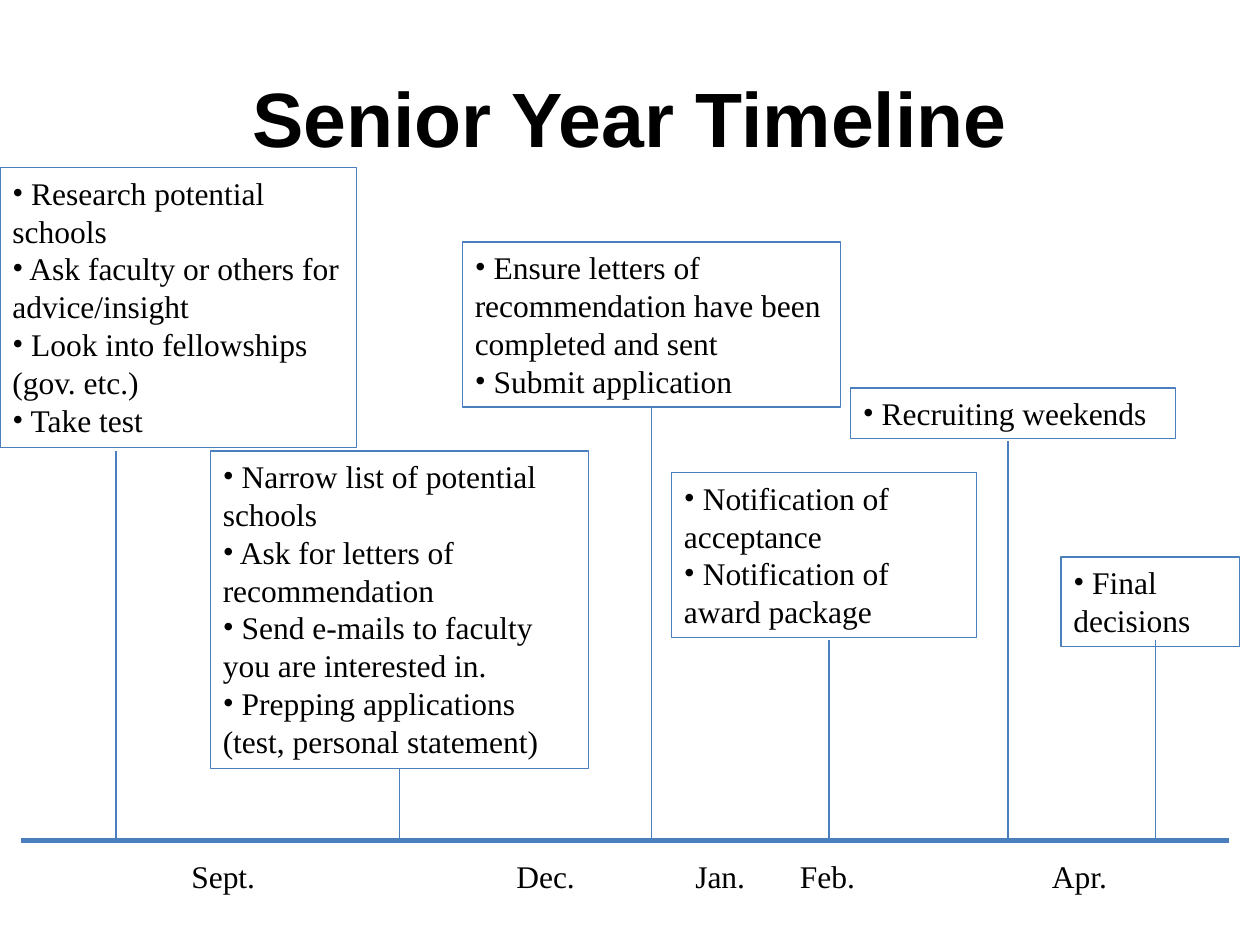
from lxml import etree
from pptx import Presentation
from pptx.dml.color import RGBColor
from pptx.enum import shapes, text
from pptx.oxml import ns
from pptx.util import Inches, Pt

BLUE = RGBColor(0x4B, 0x7E, 0xBC)
BLACK = RGBColor(0, 0, 0)
AXIS_Y = 6.67


def write(paragraph, words, font="Times New Roman", size=18, bold=False):
    run = paragraph.add_run()
    run.text = words
    run.font.name = font
    run.font.size = Pt(size)
    run.font.bold = bold
    run.font.color.rgb = BLACK


def draw_line(x1, y1, x2, y2, width):
    line = slide.shapes.add_connector(
        shapes.MSO_CONNECTOR.STRAIGHT, Inches(x1), Inches(y1), Inches(x2), Inches(y2))
    line.line.color.rgb = BLUE
    line.line.width = Pt(width)
    etree.SubElement(line._element.spPr, ns.qn("a:effectLst"))
    return line


prs = Presentation()
prs.slide_width, prs.slide_height = Inches(10), Inches(7.5)
slide = prs.slides.add_slide(prs.slide_layouts[6])

title = slide.shapes.add_textbox(Inches(0.5), Inches(0.3), Inches(9), Inches(1.25)).text_frame
title.word_wrap = True
title.vertical_anchor = text.MSO_ANCHOR.MIDDLE
title.paragraphs[0].alignment = text.PP_ALIGN.CENTER
write(title.paragraphs[0], " Senior Year Timeline ", "Arial", 44, True)

draw_line(0.17, AXIS_Y, 9.75, AXIS_Y, 3)

months = [("Sept.", 1.42), ("Dec.", 4), ("Jan.", 5.42), ("Feb.", 6.25), ("Apr.", 8.25)]
for month, left in months:
    label = slide.shapes.add_textbox(Inches(left), Inches(6.75), Inches(0.83), Inches(0.4)).text_frame
    label.word_wrap = True
    write(label.paragraphs[0], month)

stages = [
    (0, 1.33, 2.83, 2.22, 0.92, 3.58, False,
     ["Research potential schools", "Ask faculty or others for advice/insight",
      "Look into fellowships (gov. etc.)", "Take test"]),
    (1.67, 3.58, 3, 2.52, 3.17, 6.1, True,
     ["Narrow list of potential schools", "Ask for letters of recommendation",
      "Send e-mails to faculty you are interested in.",
      "Prepping applications (test, personal statement)"]),
    (3.67, 1.92, 3, 1.31, 5.17, 3.23, True,
     ["Ensure letters of recommendation have been completed and sent",
      "Submit application"]),
    (5.33, 3.75, 2.42, 1.31, 6.58, 5.08, False,
     ["Notification of acceptance", "Notification of award package"]),
    (6.75, 3.08, 2.58, 0.4, 8, 3.5, False, ["Recruiting weekends"]),
    (8.42, 4.42, 1.42, 0.71, 9.17, 5.08, False, ["Final decisions"]),
]
for left, top, width, height, stem_x, stem_top, joined, tasks in stages:
    stage = slide.shapes.add_shape(
        shapes.MSO_SHAPE.RECTANGLE, Inches(left), Inches(top), Inches(width), Inches(height))
    stage.shadow.inherit = False
    stage.fill.background()
    stage.line.color.rgb = BLUE
    stage.line.width = Pt(0.75)
    frame = stage.text_frame
    frame.word_wrap = True
    frame.vertical_anchor = text.MSO_ANCHOR.TOP
    for i, task in enumerate(tasks):
        paragraph = frame.add_paragraph() if i else frame.paragraphs[0]
        paragraph.alignment = text.PP_ALIGN.LEFT
        properties = paragraph._p.get_or_add_pPr()
        etree.SubElement(properties, ns.qn("a:buFont")).set("typeface", "Times New Roman")
        etree.SubElement(properties, ns.qn("a:buChar")).set("char", "•")
        write(paragraph, " " + task)

    stem = draw_line(stem_x, AXIS_Y, stem_x, stem_top, 0.75)
    if joined:
        stem.end_connect(stage, 2)

prs.save("out.pptx")
